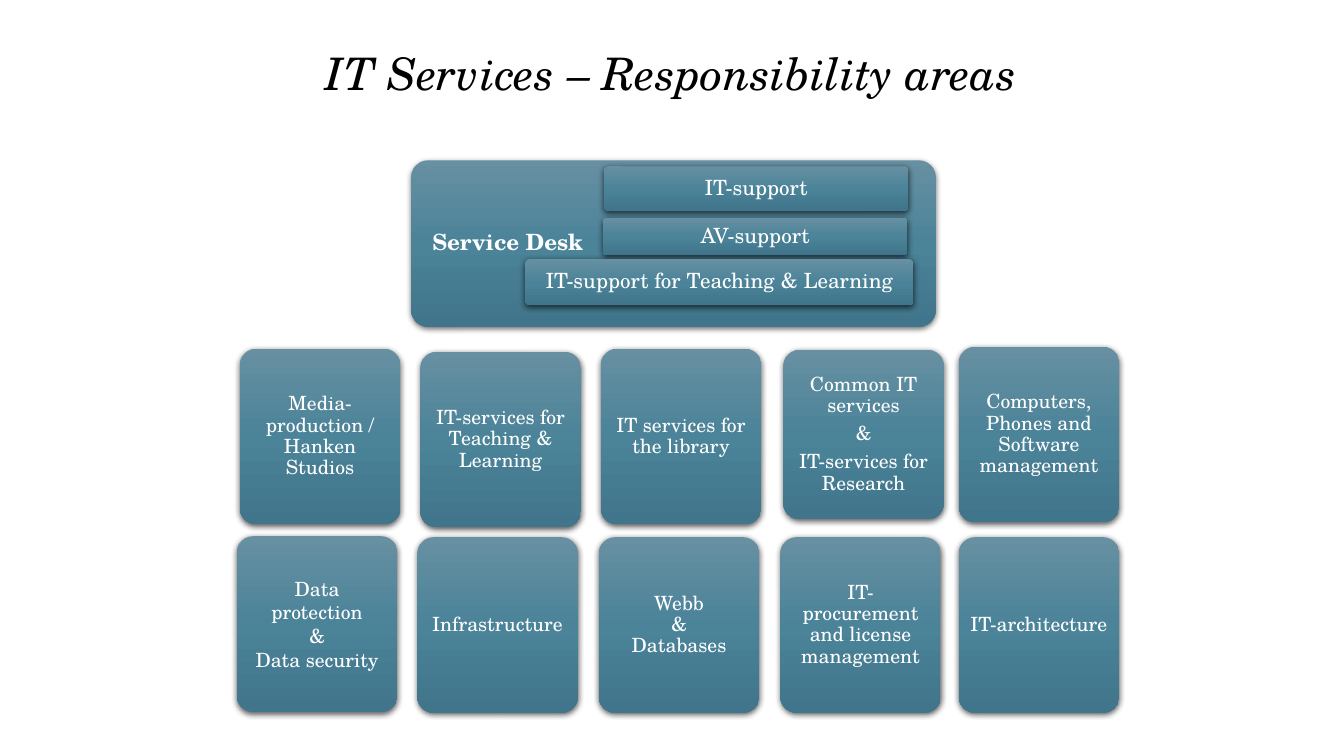
import pptx
import pptx.util
import pptx.oxml
import pptx.oxml.ns
import pptx.dml.color
import pptx.enum.shapes
import pptx.enum.text
from dataclasses import dataclass

Inches, Pt = pptx.util.Inches, pptx.util.Pt
RGB = pptx.dml.color.RGBColor.from_string
PP_ALIGN = pptx.enum.text.PP_ALIGN
MIDDLE = pptx.enum.text.MSO_ANCHOR.MIDDLE


@dataclass(frozen=True)
class Theme:
    font: str = "TeX Gyre Schola"
    title_color: str = "000000"
    box_text: str = "FFFFFF"
    shadow: str = "000000"
    gradient: tuple = ((0, "6790A2"), (50, "4B8399"), (100, "40758B"))
    title_size: int = 32
    desk_size: int = 16
    support_size: int = 15
    area_size: int = 14
    inset: float = 0.06


class SlideBuilder:
    def __init__(self, prs, theme):
        self.theme = theme
        self.s = prs.slides.add_slide(prs.slide_layouts[5])

    def font(self, p, size, color, bold=False, italic=False):
        f = p.font
        f.name, f.size, f.bold, f.italic = self.theme.font, Pt(size), bold, italic
        f.color.rgb = RGB(color)

    def title(self, text, left, top, width, height):
        sp = self.s.shapes.title
        sp.left, sp.top, sp.width, sp.height = map(Inches, (left, top, width, height))
        tf = sp.text_frame
        tf.margin_left = tf.margin_right = tf.margin_top = tf.margin_bottom = 0
        tf.vertical_anchor = MIDDLE
        p = tf.paragraphs[0]
        p.text = text
        p.alignment = PP_ALIGN.CENTER
        self.font(p, self.theme.title_size, self.theme.title_color, italic=True)

    def shade(self, sp):
        """Give a box its vertical gradient and soft drop shadow."""
        t = self.theme
        ns = pptx.oxml.ns.nsdecls("a")
        stops = "".join(
            f'<a:gs pos="{pos * 1000}"><a:srgbClr val="{color}"/></a:gs>'
            for pos, color in t.gradient)
        gradient = pptx.oxml.parse_xml(
            f'<a:gradFill {ns} rotWithShape="1"><a:gsLst>{stops}</a:gsLst>'
            '<a:lin ang="5400000" scaled="0"/></a:gradFill>')
        effects = pptx.oxml.parse_xml(
            f'<a:effectLst {ns}><a:outerShdw blurRad="{Pt(4.5)}" dist="{Pt(1.5)}" '
            f'dir="5400000" rotWithShape="0"><a:srgbClr val="{t.shadow}">'
            '<a:alpha val="63000"/></a:srgbClr></a:outerShdw></a:effectLst>')
        sp.line.fill.background()
        outline = sp.line._ln
        outline.addprevious(gradient)
        outline.addnext(effects)

    def box(self, lines, left, top, width, height, size, align=PP_ALIGN.CENTER,
            bold=False, left_inset=None, spacing=0.9, after=5):
        sp = self.s.shapes.add_shape(
            pptx.enum.shapes.MSO_SHAPE.ROUNDED_RECTANGLE,
            *map(Inches, (left, top, width, height)))
        sp.adjustments[0] = 0.1
        self.shade(sp)
        tf = sp.text_frame
        tf.word_wrap = True
        tf.vertical_anchor = MIDDLE
        inset = Inches(self.theme.inset)
        tf.margin_left = tf.margin_right = tf.margin_top = tf.margin_bottom = inset
        if left_inset is not None:
            tf.margin_left = Inches(left_inset)
        for i, line in enumerate(lines):
            p = tf.add_paragraph() if i else tf.paragraphs[0]
            p.text = line
            p.alignment = align
            p.line_spacing = spacing
            p.space_after = Pt(after)
            self.font(p, size, self.theme.box_text, bold=bold)


AREA_WIDTH, AREA_HEIGHT = 1.59, 1.74
TIGHT = {"after": 0}
LOOSE = {"spacing": 1.0, "after": 0}

# left, top, height, paragraphs, paragraph options
AREAS = [
    (2.38, 3.46, AREA_HEIGHT, ["Media-production / Hanken Studios"], {}),
    (4.17, 3.49, AREA_HEIGHT, ["IT-services for Teaching & Learning"], {}),
    (5.96, 3.46, AREA_HEIGHT, ["IT services for the library"], {}),
    (7.77, 3.47, 1.68,
     ["Common IT services", "&", "IT-services for Research"], {}),
    (9.51, 3.44, AREA_HEIGHT, ["Computers, Phones and Software management"], TIGHT),
    (2.35, 5.32, AREA_HEIGHT, ["Data protection\n&", "Data security"], LOOSE),
    (4.14, 5.33, AREA_HEIGHT, ["Infrastructure"], {}),
    (5.94, 5.33, AREA_HEIGHT, ["Webb\n&\nDatabases"], {}),
    (7.74, 5.33, AREA_HEIGHT, ["IT-procurement and license management"], {}),
    (9.51, 5.33, AREA_HEIGHT, ["IT-architecture"], {}),
]

SUPPORT = [
    ("IT-support", 5.99, 1.65, 3.02, 0.44),
    ("AV-support", 5.98, 2.16, 3.02, 0.37),
    ("IT-support for Teaching & Learning", 5.21, 2.57, 3.85, 0.46),
]


def main():
    prs = pptx.Presentation()
    prs.slide_width, prs.slide_height = Inches(13.33), Inches(7.5)
    theme = Theme()
    slide = SlideBuilder(prs, theme)
    slide.title("IT Services – Responsibility areas", 0, 0.43, 13.32, 0.58)
    for left, top, height, lines, options in AREAS:
        slide.box(lines, left, top, AREA_WIDTH, height, theme.area_size, **options)
    slide.box(["Service Desk"], 4.08, 1.59, 5.2, 1.65, theme.desk_size,
              align=PP_ALIGN.LEFT, bold=True, left_inset=0.16)
    for text, left, top, width, height in SUPPORT:
        slide.box([text], left, top, width, height, theme.support_size)
    prs.save("out.pptx")


if __name__ == "__main__":
    main()
